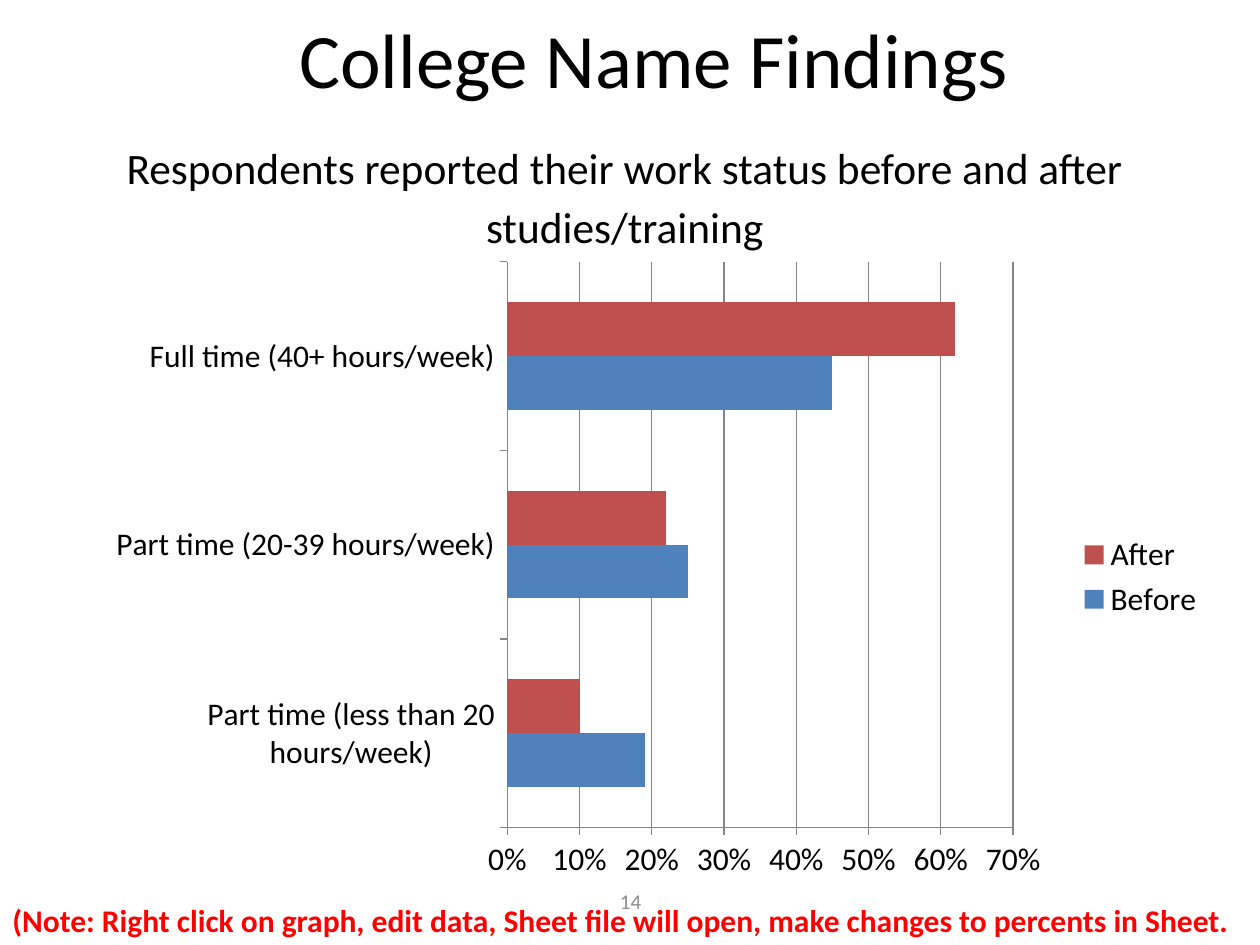
from dataclasses import dataclass, field

from lxml import etree
from pptx import Presentation
from pptx import util as u
from pptx.chart.data import CategoryChartData
from pptx.dml.color import RGBColor
from pptx.enum import chart as ch, text
from pptx.oxml import ns

FONT = "Calibri"
COLORS = {
    "ink": "000000",
    "number": "8C8C8C",
    "note": "FF0000",
    "axis": "868686",
    "Before": "4F81BD",
    "After": "C0504D",
}
CATEGORIES = [
    "Part time (less than 20 hours/week)",
    "Part time (20-39 hours/week)",
    "Full time (40+ hours/week)",
]
SERIES = {"Before": (0.19, 0.25, 0.45), "After": (0.1, 0.22, 0.62)}
PLOT_LAYOUT = {"x": 0.391, "y": 0.038, "w": 0.434, "h": 0.829}


@dataclass
class Label:
    box: tuple
    lines: list
    size: float
    color: str = "ink"
    frame: dict = field(default_factory=dict)
    para: dict = field(default_factory=dict)
    bold: bool = False


MIDDLE = {"word_wrap": True, "vertical_anchor": text.MSO_ANCHOR.MIDDLE}
CENTER = {"alignment": text.PP_ALIGN.CENTER}
LABELS = [
    Label((1.15, -0.25, 8.08, 1.42), ["College Name Findings"], 44,
          frame=MIDDLE, para=CENTER),
    Label((0.25, 1.07, 9.42, 0.89),
          ["Respondents reported their work status before and after",
           "studies/training"], 24.8,
          frame={"word_wrap": True},
          para={**CENTER, "space_before": u.Pt(4)}),
    Label((3.42, 6.95, 3.17, 0.4), ["14"], 12, "number",
          frame=MIDDLE, para=CENTER),
    Label((0, 7.1, 9.93, 0.4),
          ["(Note: Right click on graph, edit data, Sheet file will open, "
           "make changes to percents in Sheet."], 18, "note",
          frame={"word_wrap": False,
                 "auto_size": text.MSO_AUTO_SIZE.SHAPE_TO_FIT_TEXT},
          bold=True),
]


def set_all(obj, values: dict) -> None:
    for name, value in values.items():
        setattr(obj, name, value)


def rgb(name: str) -> RGBColor:
    return RGBColor.from_string(COLORS[name])


def style_font(font, size: float, color: str, bold: bool = False) -> None:
    set_all(font, {"name": FONT, "size": u.Pt(size), "bold": bold})
    font.color.rgb = rgb(color)


def add_label(s, label: Label) -> None:
    sp = s.shapes.add_textbox(*map(u.Inches, label.box))
    tf = sp.text_frame
    set_all(tf, label.frame)
    for i, line in enumerate(label.lines):
        p = tf.add_paragraph() if i else tf.paragraphs[0]
        set_all(p, label.para)
        r = p.add_run()
        r.text = line
        style_font(r.font, label.size, label.color, label.bold)


def style_line(line) -> None:
    line.color.rgb = rgb("axis")
    line.width = u.Pt(0.75)


def place_plot(chart) -> None:
    area = chart.element.find(".//" + ns.qn("c:plotArea"))
    layout = area.find(ns.qn("c:layout"))
    if layout is None:
        layout = etree.Element(ns.qn("c:layout"))
        area.insert(0, layout)
    manual = etree.SubElement(layout, ns.qn("c:manualLayout"))
    values = {"layoutTarget": "inner", "xMode": "edge", "yMode": "edge",
              **PLOT_LAYOUT}
    for tag, value in values.items():
        etree.SubElement(manual, ns.qn(f"c:{tag}")).set("val", str(value))


def add_status_chart(s) -> None:
    data = CategoryChartData(number_format="0%")
    data.categories = CATEGORIES
    for name, values in SERIES.items():
        data.add_series(name, values)
    box = map(u.Inches, (0.41, 1.87, 9.25, 5.42))
    chart = s.shapes.add_chart(ch.XL_CHART_TYPE.BAR_CLUSTERED, *box, data).chart
    style_font(chart.font, 18, "ink")
    set_all(chart, {"has_title": False, "has_legend": True})
    set_all(chart.legend, {"position": ch.XL_LEGEND_POSITION.RIGHT,
                           "include_in_layout": False})

    plot = chart.plots[0]
    set_all(plot, {"gap_width": 150, "vary_by_categories": False})
    for series in plot.series:
        series.format.fill.solid()
        series.format.fill.fore_color.rgb = rgb(series.name)

    for axis in (chart.category_axis, chart.value_axis):
        axis.major_tick_mark = ch.XL_TICK_MARK.OUTSIDE
        style_line(axis.format.line)
    axis = chart.value_axis
    set_all(axis, {"minimum_scale": 0, "maximum_scale": 0.7,
                   "major_unit": 0.1, "has_major_gridlines": True})
    set_all(axis.tick_labels, {"number_format": "0%",
                               "number_format_is_linked": False})
    style_line(axis.major_gridlines.format.line)
    place_plot(chart)


def main() -> None:
    prs = Presentation()
    set_all(prs, {"slide_width": u.Inches(10), "slide_height": u.Inches(7.5)})
    s = prs.slides.add_slide(prs.slide_layouts[6])
    for label in LABELS:
        add_label(s, label)
    add_status_chart(s)
    prs.save("out.pptx")


if __name__ == "__main__":
    main()
